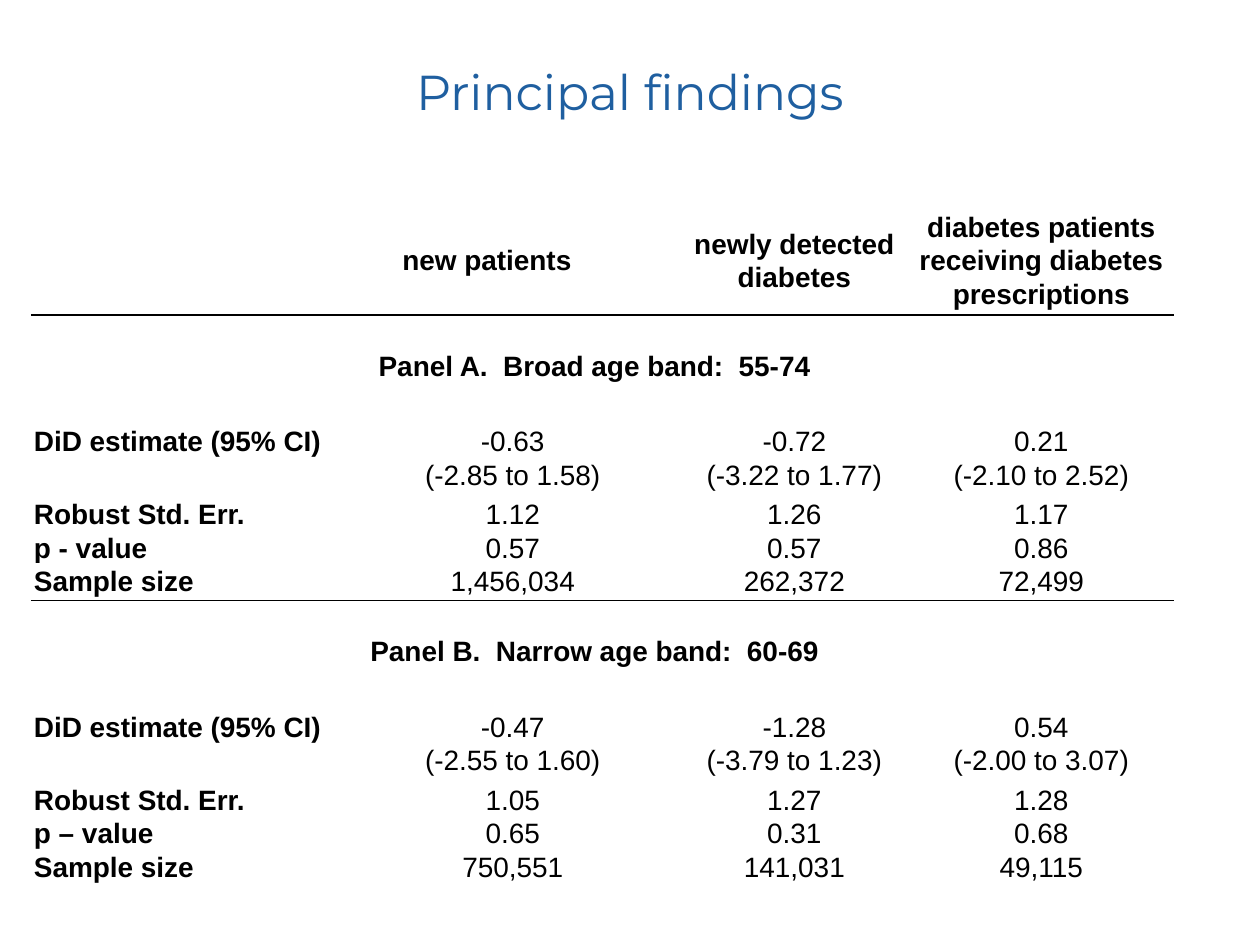
from lxml.etree import SubElement
from pptx import Presentation
from pptx.dml.color import RGBColor
from pptx.enum.text import MSO_ANCHOR, PP_ALIGN
from pptx.oxml.ns import qn
from pptx.util import Inches, Pt

WIDE, HIGH = 10, 7.5
COLORS = {"title": "1F5FA0", "text": "000000", "rule": "000000", "grid": "FFFFFF"}
COLS = [2.09, 0.41, 2.64, 1.83, 2.09]
HEAD = 0.87
BAND = [0.87, 0.58, 0.26, 0.26, 0.29]  # panel name, estimate, error, p, sample
HEADS = ["new patients", "", "newly detected diabetes",
         "diabetes patients receiving diabetes prescriptions"]
PANELS = [
    ("Panel A.  Broad age band:  55-74", [
        ("DiD estimate (95% CI)", "-0.63\n(-2.85 to 1.58)",
         "-0.72\n(-3.22 to 1.77)", "0.21\n(-2.10 to 2.52)"),
        ("Robust Std. Err.", "1.12", "1.26", "1.17"),
        ("p - value", "0.57", "0.57", "0.86"),
        ("Sample size", "1,456,034", "262,372", "72,499")]),
    ("Panel B.  Narrow age band:  60-69", [
        ("DiD estimate (95% CI)", "-0.47\n(-2.55 to 1.60)",
         "-1.28\n(-3.79 to 1.23)", "0.54\n(-2.00 to 3.07)"),
        ("Robust Std. Err.", "1.05", "1.27", "1.28"),
        ("p – value", "0.65", "0.31", "0.68"),
        ("Sample size", "750,551", "141,031", "49,115")]),
]


def write(frame, text, size=16, font="Arial", color="text", bold=False,
          align=PP_ALIGN.CENTER, space=1.07):
    para = frame.paragraphs[0]
    para.text = text
    para.alignment = align
    para.line_spacing = space
    for run in para.runs:
        run.font.size = Pt(size)
        run.font.name = font
        run.font.bold = bold
        run.font.color.rgb = RGBColor.from_string(COLORS[color])
    # Breaks and empty paragraphs need the size too, or rows grow.
    for gap in para._p.findall(qn("a:br")):
        SubElement(gap, qn("a:rPr"), sz=str(size * 100))
    if not text:
        SubElement(para._p, qn("a:endParaRPr"), sz=str(size * 100))


def edge(cell, side, color):
    line = SubElement(cell._tc.get_or_add_tcPr(), qn("a:ln" + side), w=str(Pt(1)))
    fill = SubElement(line, qn("a:solidFill"))
    SubElement(fill, qn("a:srgbClr"), val=COLORS[color])


def style(cell, above, below):
    """Clear a cell and rule it above or below when asked."""
    cell.margin_left = cell.margin_right = Inches(0.02)
    cell.margin_top = cell.margin_bottom = 0
    for side, ruled in zip("LRTB", (False, False, above, below)):
        edge(cell, side, "rule" if ruled else "grid")
    cell.fill.background()


def add_title(slide, text):
    title = slide.shapes.title
    title.left, title.top = Inches(-WIDE / 6), 0
    title.width, title.height = Inches(WIDE * 4 / 3), Inches(1.45)
    title.text_frame.vertical_anchor = MSO_ANCHOR.MIDDLE
    write(title.text_frame, text, size=28, font="Montserrat", color="title", space=1.0)


def add_grid(slide):
    """Add the empty table, with a rule under the header and first panel."""
    highs = [HEAD] + BAND * len(PANELS)
    shape = slide.shapes.add_table(
        len(highs), len(COLS), Inches(0.25), Inches(1.63),
        Inches(sum(COLS)), Inches(sum(highs)))
    table = shape.table
    table.first_row = table.horz_banding = False
    for col, width in zip(table.columns, COLS):
        col.width = Inches(width)
    for row, high in zip(table.rows, highs):
        row.height = Inches(high)
    rules = [len(BAND) * n for n in range(len(PANELS))]
    for r in range(len(highs)):
        for c in range(len(COLS)):
            cell = table.cell(r, c)
            style(cell, r - 1 in rules, r in rules)
            write(cell.text_frame, "") if not c else None
    return table


def fill_head(table):
    table.cell(0, 1).merge(table.cell(0, 2))
    for c, text in enumerate(HEADS, 1):
        cell = table.cell(0, c)
        cell.vertical_anchor = MSO_ANCHOR.MIDDLE
        write(cell.text_frame, text, bold=True)


def fill_panel(table, top, name, rows):
    cell = table.cell(top, 0)
    cell.merge(table.cell(top, len(COLS) - 1))
    cell.margin_top, cell.margin_right = Inches(0.27), Inches(0.14)
    write(cell.text_frame, name, bold=True)
    for r, (label, *values) in enumerate(rows, top + 1):
        table.cell(r, 0).merge(table.cell(r, 1))
        write(table.cell(r, 0).text_frame, label, bold=True, align=PP_ALIGN.LEFT)
        write(table.cell(r, 1).text_frame, "")
        for c, value in enumerate(values, 2):
            write(table.cell(r, c).text_frame, value)


def main():
    deck = Presentation()
    deck.slide_width, deck.slide_height = Inches(WIDE), Inches(HIGH)
    slide = deck.slides.add_slide(deck.slide_layouts[5])
    add_title(slide, "Principal findings")
    table = add_grid(slide)
    fill_head(table)
    for n, (name, rows) in enumerate(PANELS):
        fill_panel(table, 1 + n * len(BAND), name, rows)
    deck.save("out.pptx")


if __name__ == "__main__":
    main()
